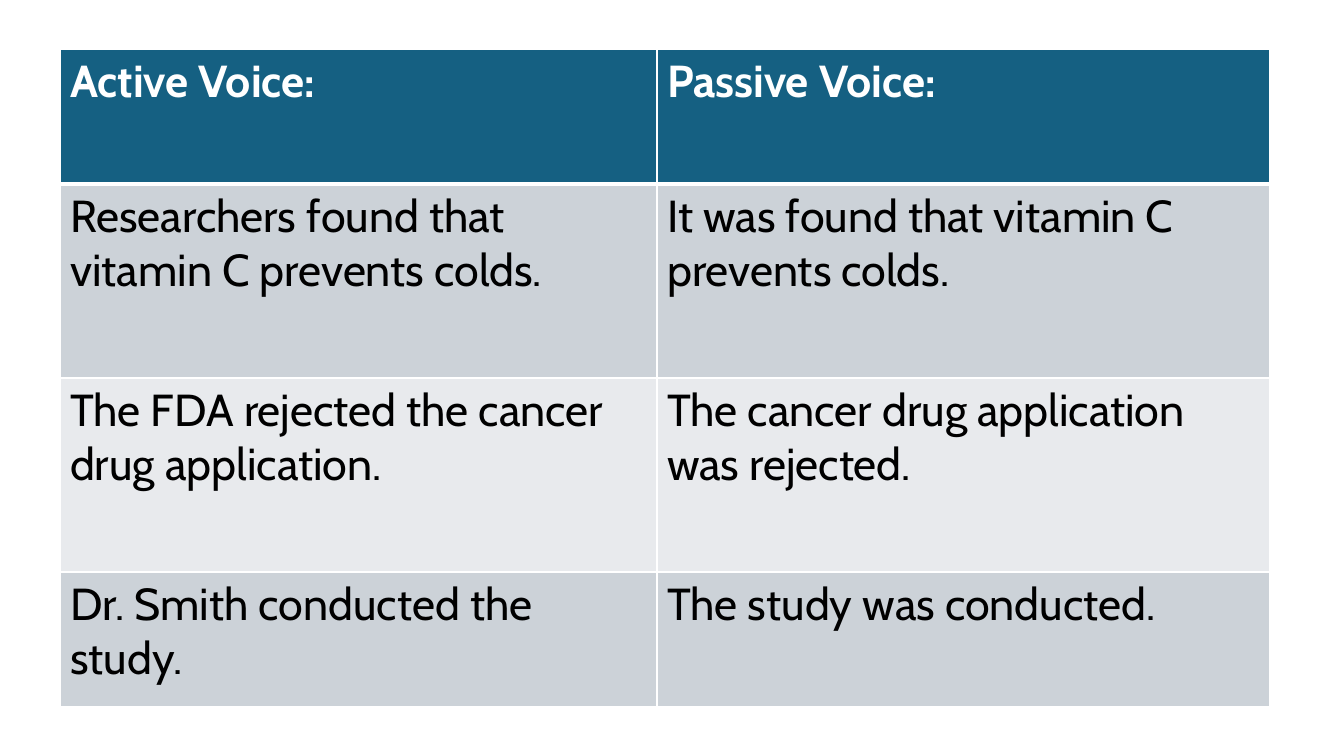
import pptx
import pptx.dml.color
import pptx.oxml
import pptx.oxml.ns
import pptx.util

EMU_PER_PX = 914400 / 100.8
WHITE, BLACK = "FFFFFF", "000000"
HEADER_FILL = "156082"
BAND_FILLS = ["CCD2D8", "E8EAED"]
COLUMN_WIDTHS = [597, 613]
ROW_HEIGHTS = [135, 194, 194, 135]
VOICE_ROWS = [
    ("Active Voice:", "Passive Voice:"),
    ("Researchers found that vitamin C prevents colds.",
     "It was found that vitamin C prevents colds."),
    ("The FDA rejected the cancer drug application.",
     "The cancer drug application was rejected."),
    ("Dr. Smith conducted the study.", "The study was conducted."),
]


def px(length):
    return pptx.util.Emu(round(length * EMU_PER_PX))


def color(hex_string):
    return pptx.dml.color.RGBColor.from_string(hex_string)


def set_borders(cell, widths):
    """Give the cell white borders; widths maps L, R, T, B to points."""
    properties = cell._tc.get_or_add_tcPr()
    namespace = pptx.oxml.ns.nsdecls("a")
    for index, side in enumerate("LRTB"):
        line = pptx.oxml.parse_xml(
            f'<a:ln{side} {namespace} w="{pptx.util.Pt(widths[side])}">'
            f'<a:solidFill><a:srgbClr val="{WHITE}"/></a:solidFill>'
            f'</a:ln{side}>')
        properties.insert(index, line)


def fill_cell(cell, text, row):
    is_header = row == 0
    fill = HEADER_FILL if is_header else BAND_FILLS[(row - 1) % 2]
    cell.fill.solid()
    cell.fill.fore_color.rgb = color(fill)
    set_borders(cell, {"L": 1, "R": 1, "T": 3 if row == 1 else 1,
                       "B": 3 if is_header else 1})
    cell.text_frame.text = text
    font = cell.text_frame.paragraphs[0].runs[0].font
    font.name = "Cabin"
    font.size = pptx.util.Pt(32)
    font.bold = is_header
    font.color.rgb = color(WHITE if is_header else BLACK)


def add_voice_table(slide, left, top):
    frame = slide.shapes.add_table(
        len(ROW_HEIGHTS), len(COLUMN_WIDTHS), px(left), px(top),
        px(sum(COLUMN_WIDTHS)), px(sum(ROW_HEIGHTS)))
    table = frame.table
    for column, width in zip(table.columns, COLUMN_WIDTHS):
        column.width = px(width)
    for row, (height, texts) in enumerate(zip(ROW_HEIGHTS, VOICE_ROWS)):
        table.rows[row].height = px(height)
        for column, text in enumerate(texts):
            fill_cell(table.cell(row, column), text, row)


def main():
    presentation = pptx.Presentation()
    presentation.slide_width, presentation.slide_height = px(1344), px(756)
    slide = presentation.slides.add_slide(presentation.slide_layouts[6])
    add_voice_table(slide, 60, 49)
    presentation.save("out.pptx")


if __name__ == "__main__":
    main()
